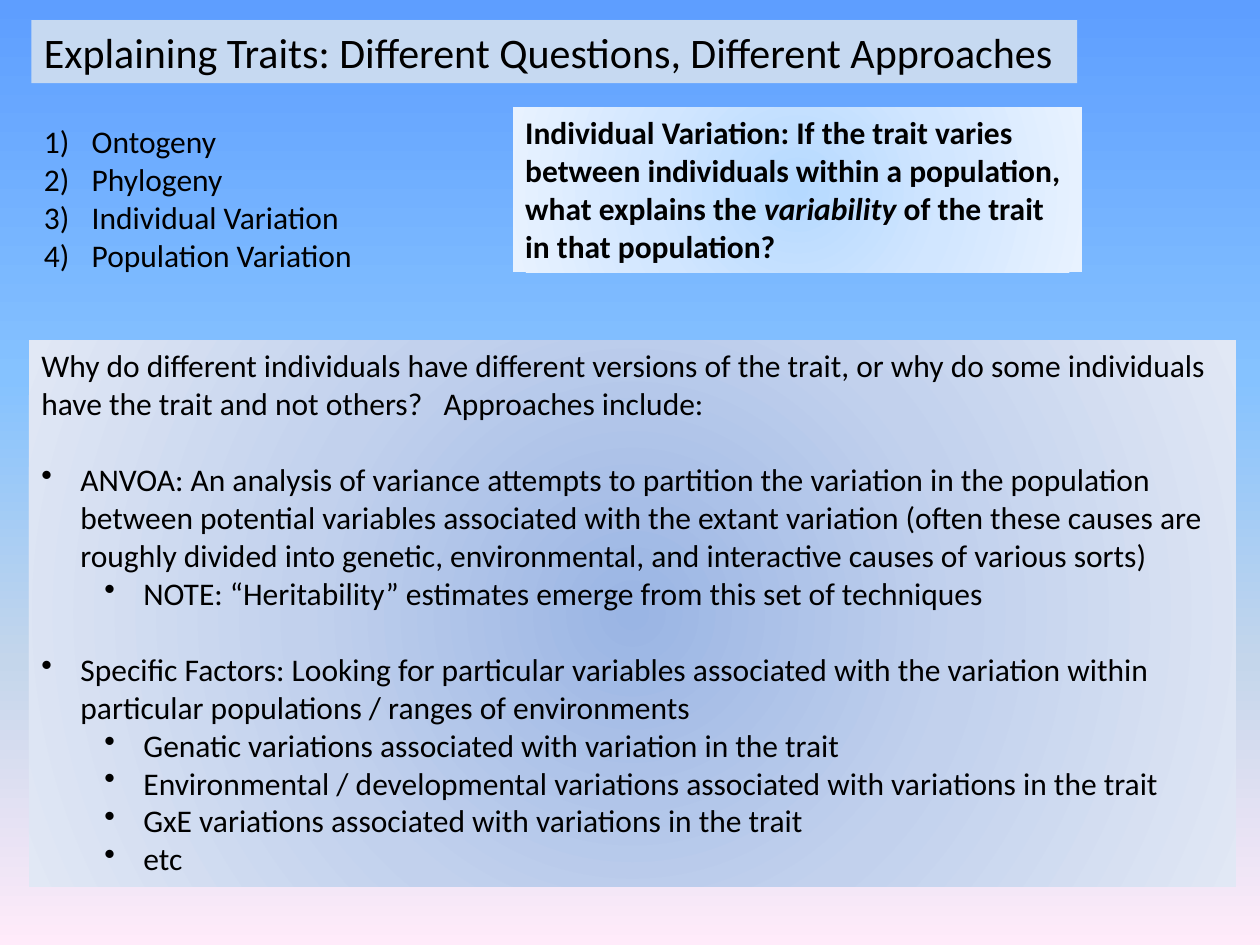
from lxml import etree
from pptx import Presentation
from pptx import util as u
from pptx.dml.color import RGBColor
from pptx.enum import shapes, text
from pptx.oxml.ns import qn

BLACK = RGBColor(0x00, 0x00, 0x00)
TITLE_FILL = RGBColor(0xC6, 0xD9, 0xF1)
SKY = [(0, RGBColor(0x5E, 0x9E, 0xFF)), (40, RGBColor(0x85, 0xC2, 0xFF)),
       (70, RGBColor(0xC4, 0xD6, 0xEB)), (100, RGBColor(0xFF, 0xEB, 0xFA))]
SLATE_GLOW = [(0, RGBColor(0x9A, 0xB5, 0xE4)), (50, RGBColor(0xC2, 0xD1, 0xED)),
              (100, RGBColor(0xE1, 0xE8, 0xF5))]
PALE_GLOW = [(0, RGBColor(0xB5, 0xD9, 0xFF)), (50, RGBColor(0xD1, 0xE6, 0xFF)),
             (100, RGBColor(0xE8, 0xF2, 0xFF))]

FONT = "Calibri"
BODY_SIZE = 18
BLANK_LINE = u.Pt(22)
DOT = ("buChar", {"char": "•"})
NUMBER = ("buAutoNum", {"type": "arabicParenR"})

TOPICS = ["Ontogeny", "Phylogeny", "Individual Variation", "Population Variation"]
QUESTION = ["Individual Variation: If the trait varies between individuals within a "
            "population, what explains the ", "variability",
            " of the trait in that population?"]
INTRO = ("Why do different individuals have different versions of the trait, or why do "
         "some individuals have the trait and not others?\u00a0\u00a0 Approaches include:")
APPROACHES = [
    ("ANVOA: An analysis of variance attempts to partition the variation in the "
     "population between potential variables associated with the extant variation "
     "(often these causes are roughly divided into genetic, environmental, and "
     "interactive causes of various sorts)",
     ["NOTE: “Heritability” estimates emerge from this set of techniques"]),
    ("Specific Factors: Looking for particular variables associated with the variation "
     "within particular populations / ranges of environments",
     ["Genatic variations associated with variation in the trait",
      "Environmental / developmental variations associated with variations in the trait",
      "GxE variations associated with variations in the trait",
      "etc"]),
]


def set_gradient(fill, owner, stops, radial=False):
    fill.gradient()
    gradient = owner.find(".//" + qn("a:gradFill"))
    for child in list(gradient):
        gradient.remove(child)
    stop_list = etree.SubElement(gradient, qn("a:gsLst"))
    for position, color in stops:
        stop = etree.SubElement(stop_list, qn("a:gs"), pos=str(position * 1000))
        etree.SubElement(stop, qn("a:srgbClr"), val=str(color))
    if radial:
        shade = etree.SubElement(gradient, qn("a:path"), path="circle")
        center = dict.fromkeys("ltrb", "50000")
        etree.SubElement(shade, qn("a:fillToRect"), center)
    else:
        etree.SubElement(gradient, qn("a:lin"), ang="5400000", scaled="0")


def set_frame(box, wrap=True):
    frame = box.text_frame
    frame.word_wrap = wrap
    frame.auto_size = text.MSO_AUTO_SIZE.SHAPE_TO_FIT_TEXT
    frame.vertical_anchor = text.MSO_ANCHOR.TOP
    return frame


def add_panel(page, left, top, width, height):
    panel = page.shapes.add_shape(
        shapes.MSO_SHAPE.RECTANGLE,
        u.Inches(left), u.Inches(top), u.Inches(width), u.Inches(height))
    panel.shadow.inherit = False
    panel.line.fill.background()
    return panel


def add_para(frame, spans, size=BODY_SIZE, bold=False):
    first = frame.paragraphs[0]
    para = frame.add_paragraph() if first.runs else first
    para.alignment = text.PP_ALIGN.LEFT
    para.font.name = FONT
    para.font.size = u.Pt(size)
    para.font.bold = bold
    para.font.color.rgb = BLACK
    for words in spans:
        para.add_run().text = words
    return para


def add_item(frame, words, marker, margin, hanging, level=0):
    para = add_para(frame, [words])
    para.level = level
    properties = para._p.get_or_add_pPr()
    properties.set("marL", str(u.Inches(margin)))
    properties.set("indent", str(-u.Inches(hanging)))
    tag, attributes = marker
    bullet = etree.Element(qn("a:" + tag), attributes)
    properties.find(qn("a:defRPr")).addprevious(bullet)
    return para


def add_approaches(page):
    panel = add_panel(page, 0.23, 2.7, 9.58, 4.34)
    set_gradient(panel.fill, panel.element, SLATE_GLOW, radial=True)
    frame = set_frame(panel)
    add_para(frame, [INTRO])
    for approach, details in APPROACHES:
        para = add_item(frame, approach, DOT, 0.31, 0.31)
        para.space_before = BLANK_LINE
        for detail in details:
            add_item(frame, detail, DOT, 0.81, 0.31, level=1)


def add_title(page):
    panel = add_panel(page, 0.25, 0.16, 8.3, 0.5)
    panel.fill.solid()
    panel.fill.fore_color.rgb = TITLE_FILL
    add_para(set_frame(panel, wrap=False),
             ["Explaining Traits: Different Questions, Different Approaches"], size=24)


def add_topics(page):
    box = page.shapes.add_textbox(
        u.Inches(0.25), u.Inches(0.92), u.Inches(2.67), u.Inches(1.31))
    frame = set_frame(box, wrap=False)
    for topic in TOPICS:
        add_item(frame, topic, NUMBER, 0.38, 0.38)


def add_question(page):
    panel = add_panel(page, 4.07, 0.85, 4.52, 1.31)
    set_gradient(panel.fill, panel.element, PALE_GLOW, radial=True)
    para = add_para(set_frame(panel), QUESTION, bold=True)
    para.runs[1].font.italic = True


def main():
    deck = Presentation()
    deck.slide_width = u.Inches(10)
    deck.slide_height = u.Inches(7.5)
    page = deck.slides.add_slide(deck.slide_layouts[6])
    set_gradient(page.background.fill, page.element, SKY)
    add_approaches(page)
    add_title(page)
    add_topics(page)
    add_question(page)
    deck.save("out.pptx")


if __name__ == "__main__":
    main()
